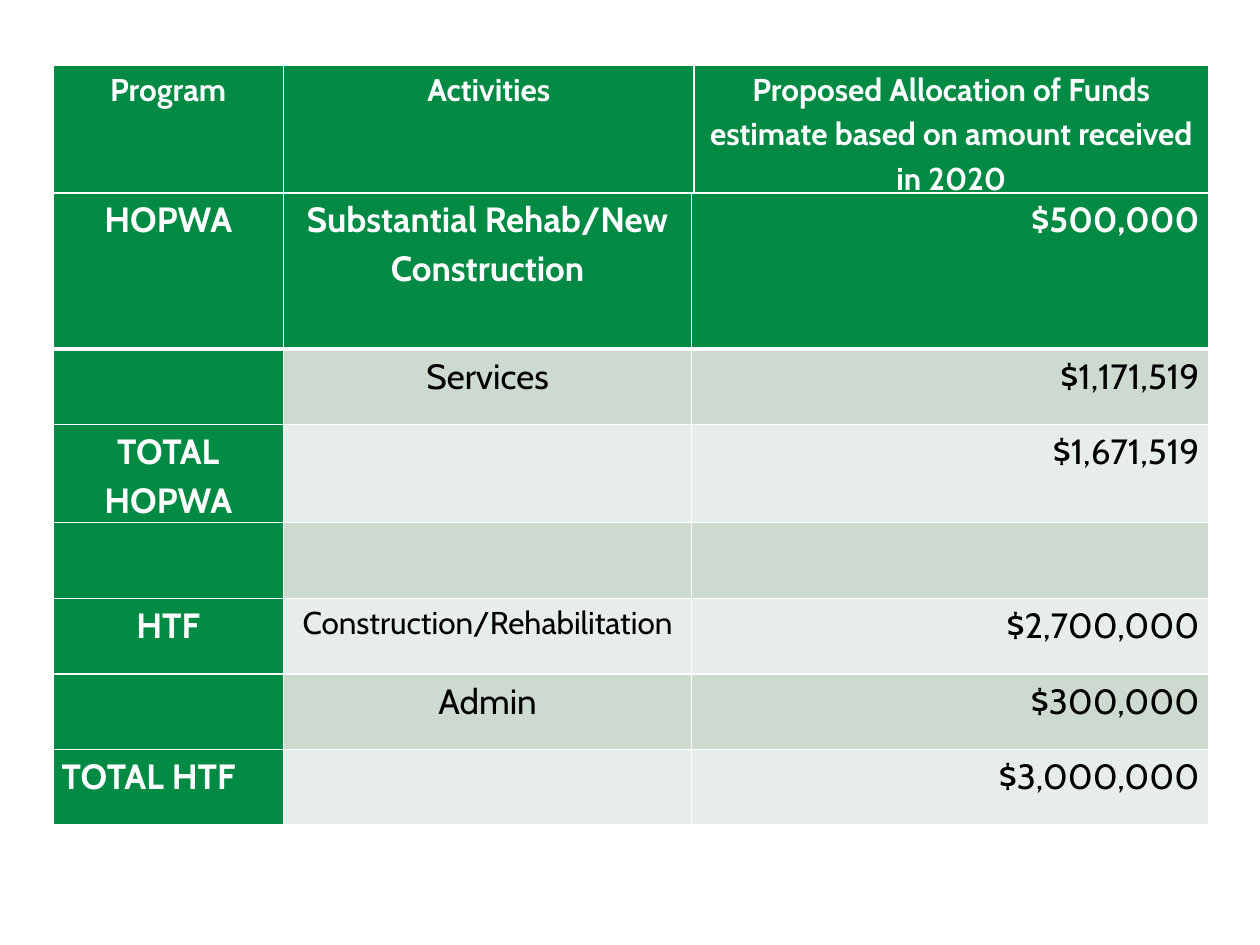
from lxml import etree
from pptx import Presentation
from pptx import util as u
from pptx.dml.color import RGBColor
from pptx.enum import text
from pptx.oxml import ns

INK = {"green": "008A43", "sage": "CCDACF", "mist": "E7EDE9",
       "white": "FFFFFF", "black": "000000"}
LEFT, MID, RIGHT = text.PP_ALIGN.LEFT, text.PP_ALIGN.CENTER, text.PP_ALIGN.RIGHT
HEAD = ["Program", "Activities",
        "Proposed Allocation of Funds estimate based on amount received in 2020"]
FUNDS = [
    ["HOPWA", "Substantial Rehab/New Construction", "$500,000"],
    ["", "Services", "$1,171,519"],
    ["TOTAL HOPWA", "", "$1,671,519"],
    ["", "", ""],
    ["HTF", "Construction/Rehabilitation", "$2,700,000"],
    ["", "Admin", "$300,000"],
    ["TOTAL HTF", "", "$3,000,000"],
]


def color(name):
    """Return the named colour."""
    return RGBColor.from_string(INK[name])


def write(cell, words, size=20, ink="black", bold=False, align=MID):
    """Put formatted text in a cell."""
    cell.margin_left = cell.margin_right = u.Inches(0.07)
    cell.margin_top = cell.margin_bottom = 0
    para = cell.text_frame.paragraphs[0]
    para.alignment = align
    para.line_spacing = 1.15
    para.font.size = u.Pt(size)
    if words:
        run = para.add_run()
        run.text = words
        font = run.font
        font.name, font.size, font.bold = "Cabin", u.Pt(size), bold
        font.color.rgb = color(ink)


def edge(cell, base=1):
    """Draw white cell borders, with the given width at the base."""
    props = cell._tc.get_or_add_tcPr()
    for side, width in zip("LRTB", (1, 1, 1, base)):
        line = etree.SubElement(props, ns.qn(f"a:ln{side}"), w=str(u.Pt(width)))
        fill = etree.SubElement(line, ns.qn("a:solidFill"))
        etree.SubElement(fill, ns.qn("a:srgbClr"), val=INK["white"])


def paint(cell, name):
    """Fill a cell with a named colour."""
    cell.fill.solid()
    cell.fill.fore_color.rgb = color(name)


def grid(slide, top, cols, rows):
    """Add an empty table with the given column widths and row heights."""
    frame = slide.shapes.add_table(len(rows), len(cols), u.Inches(0.42), u.Inches(top),
                                   u.Inches(sum(cols)), u.Inches(sum(rows)))
    table = frame.table
    for col, width in zip(table.columns, cols):
        col.width = u.Inches(width)
    for row, height in zip(table.rows, rows):
        row.height = u.Inches(height)
    return table


def add_head(slide):
    """Add the table of column titles."""
    table = grid(slide, 0.52, [1.83, 3.26, 4.08], [1.01])
    for cell, words in zip(table.iter_cells(), HEAD):
        edge(cell, 3)
        paint(cell, "green")
        write(cell, words, size=18, ink="white", bold=True)


def add_funds(slide):
    """Add the table of funds by program."""
    table = grid(slide, 1.53, [1.83, 3.24, 4.1], [1.24] + [0.6] * 6)
    for r, row in enumerate(FUNDS):
        for c, words in enumerate(row):
            cell = table.cell(r, c)
            strong = r == 0 or c == 0
            edge(cell, 3 if r == 0 else 1)
            paint(cell, "green" if strong else "sage" if r % 2 else "mist")
            write(cell, words,
                  size=18 if words == "Construction/Rehabilitation" else 20,
                  ink="white" if strong else "black", bold=strong,
                  align=LEFT if words == "TOTAL HTF" else RIGHT if c == 2 else MID)


def main():
    """Build and save the slide."""
    deck = Presentation()
    deck.slide_width, deck.slide_height = u.Inches(10), u.Inches(7.5)
    slide = deck.slides.add_slide(deck.slide_layouts[6])
    add_head(slide)
    add_funds(slide)
    deck.save("out.pptx")


if __name__ == "__main__":
    main()
